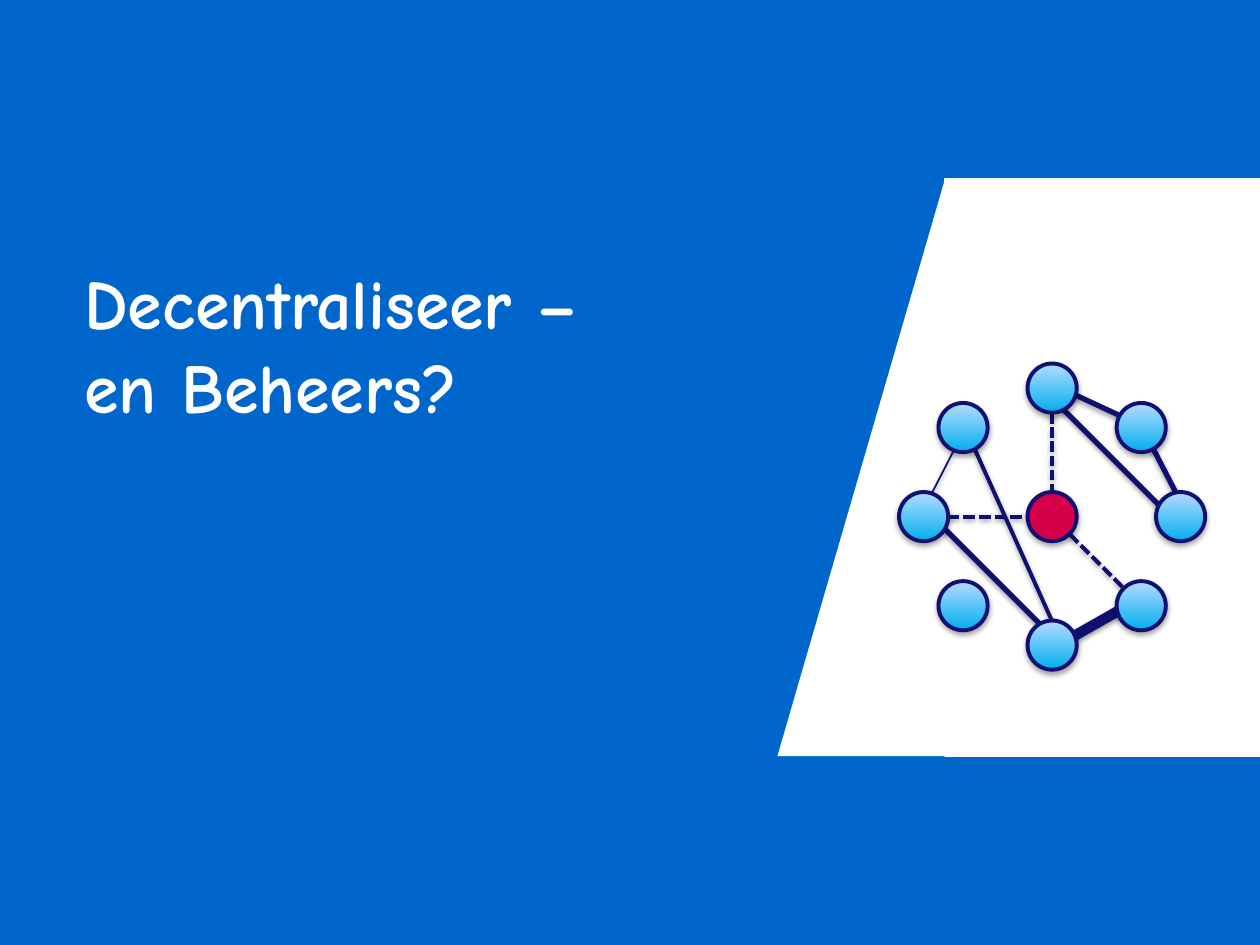
import math
import pptx
import pptx.util
import pptx.dml.color
import pptx.enum.dml
import pptx.enum.shapes
import pptx.enum.text
import pptx.oxml
from pptx.oxml.ns import qn, nsdecls

Inches, Pt = pptx.util.Inches, pptx.util.Pt
Shape = pptx.enum.shapes.MSO_SHAPE

# Content
TITLE = "Decentraliseer –\ven Beheers?"
BLUE, WHITE, NAVY, RED = "0066CC", "FFFFFF", "101073", "D6004A"
GRAD = ("00AEEF", "B5DCFF")
HUB = (8.35, 4.1)
SIZE = 0.39
# Links: start, end, width, dashed
LINKS = [
    ((8.46, 3.1), (9.02, 3.36), 3, False),
    ((9.09, 3.44), (9.41, 4.06), 3, False),
    ((8.31, 3.12), (9.25, 4.06), 3, False),
    ((8.35, 3.28), (8.35, 3.91), 2, True),
    ((7.52, 4.1), (8.15, 4.1), 2.25, True),
    ((8.49, 4.24), (8.92, 4.67), 2.25, True),
    ((9.19, 4.67), (8.31, 5.17), 6, False),
    ((7.44, 4.14), (8.39, 5.09), 3, False),
    ((7.68, 3.36), (7.28, 4.14), 1, False),
    ((7.68, 3.44), (8.35, 4.93), 2.25, False),
]


def color(text):
    return pptx.dml.color.RGBColor.from_string(text)


def shade(item, alpha, dist):
    props = item._element.spPr
    for old in props.findall(qn("a:effectLst")):
        props.remove(old)
    props.append(pptx.oxml.parse_xml(
        f'<a:effectLst {nsdecls("a")}><a:outerShdw blurRad="{Pt(3.1)}" '
        f'dist="{Pt(dist)}" dir="5400000" rotWithShape="0">'
        f'<a:srgbClr val="000000"><a:alpha val="{alpha * 1000}"/></a:srgbClr>'
        '</a:outerShdw></a:effectLst>'))


def stroke(item, tone, width):
    item.line.color.rgb = color(tone)
    item.line.width = Pt(width)


def add(slide, kind, box, fill=None):
    item = slide.shapes.add_shape(kind, *map(Inches, box))
    item.shadow.inherit = False
    if fill:
        item.fill.solid()
        item.fill.fore_color.rgb = color(fill)
    return item


def node(slide, x, y, fill=None):
    item = add(slide, Shape.OVAL, (x - SIZE / 2, y - SIZE / 2, SIZE, SIZE), fill)
    if not fill:
        item.fill.gradient()
        item.fill.gradient_angle = 90
        for stop, tone, pos in zip(item.fill.gradient_stops, GRAD, (0, 1)):
            stop.color.rgb = color(tone)
            stop.position = pos
    stroke(item, NAVY, 2.25)
    shade(item, 35, 1.8)


def link(slide, start, end, width, dashed):
    item = slide.shapes.add_connector(
        pptx.enum.shapes.MSO_CONNECTOR.STRAIGHT, *map(Inches, start + end))
    stroke(item, NAVY, width)
    if dashed:
        # The enum's square dot is the short system dot, so set sysDash here
        item.line.dash_style = pptx.enum.dml.MSO_LINE.DASH
        item.line._ln.find(qn("a:prstDash")).set("val", "sysDash")
    shade(item, 38, 1.6)


def main():
    deck = pptx.Presentation()
    deck.slide_width, deck.slide_height = Inches(10), Inches(7.5)
    slide = deck.slides.add_slide(deck.slide_layouts[5])
    slide.background.fill.solid()
    slide.background.fill.fore_color.rgb = color(BLUE)

    # Title
    title = slide.shapes.title
    box = dict(left=0.67, top=2.06, width=6.14, height=1.61)
    for key, val in box.items():
        setattr(title, key, Inches(val))
    frame = title.text_frame
    form = dict(margin_left=0, margin_top=0, margin_right=0, margin_bottom=0,
                word_wrap=True, vertical_anchor=pptx.enum.text.MSO_ANCHOR.TOP,
                auto_size=pptx.enum.text.MSO_AUTO_SIZE.NONE)
    for key, val in form.items():
        setattr(frame, key, val)
    para = frame.paragraphs[0]
    para.text = TITLE
    para.alignment = pptx.enum.text.PP_ALIGN.LEFT
    for run in para.runs:
        for key, val in dict(name="Comic Neue", size=Pt(40), bold=True).items():
            setattr(run.font, key, val)
        run.font.color.rgb = color(WHITE)

    # White panel with a slanted left edge
    panel = add(slide, Shape.RECTANGLE, (7.5, 1.42, 2.58, 4.58), WHITE)
    stroke(panel, WHITE, 0.75)
    slant = add(slide, Shape.RIGHT_TRIANGLE, (6.17, 1.42, 1.33, 4.58), WHITE)
    slant.line.fill.background()
    slant.rotation = 180
    slant._element.spPr.xfrm.set("flipV", "1")

    # Network: links below, then a ring of eight nodes round the hub
    for row in LINKS:
        link(slide, *row)
    for step in range(8):
        turn = math.radians(45 * step)
        reach = 1.0 if step % 2 else 1.02
        node(slide, HUB[0] + reach * math.cos(turn), HUB[1] + reach * math.sin(turn))
    node(slide, *HUB, RED)

    deck.save("out.pptx")


if __name__ == "__main__":
    main()
